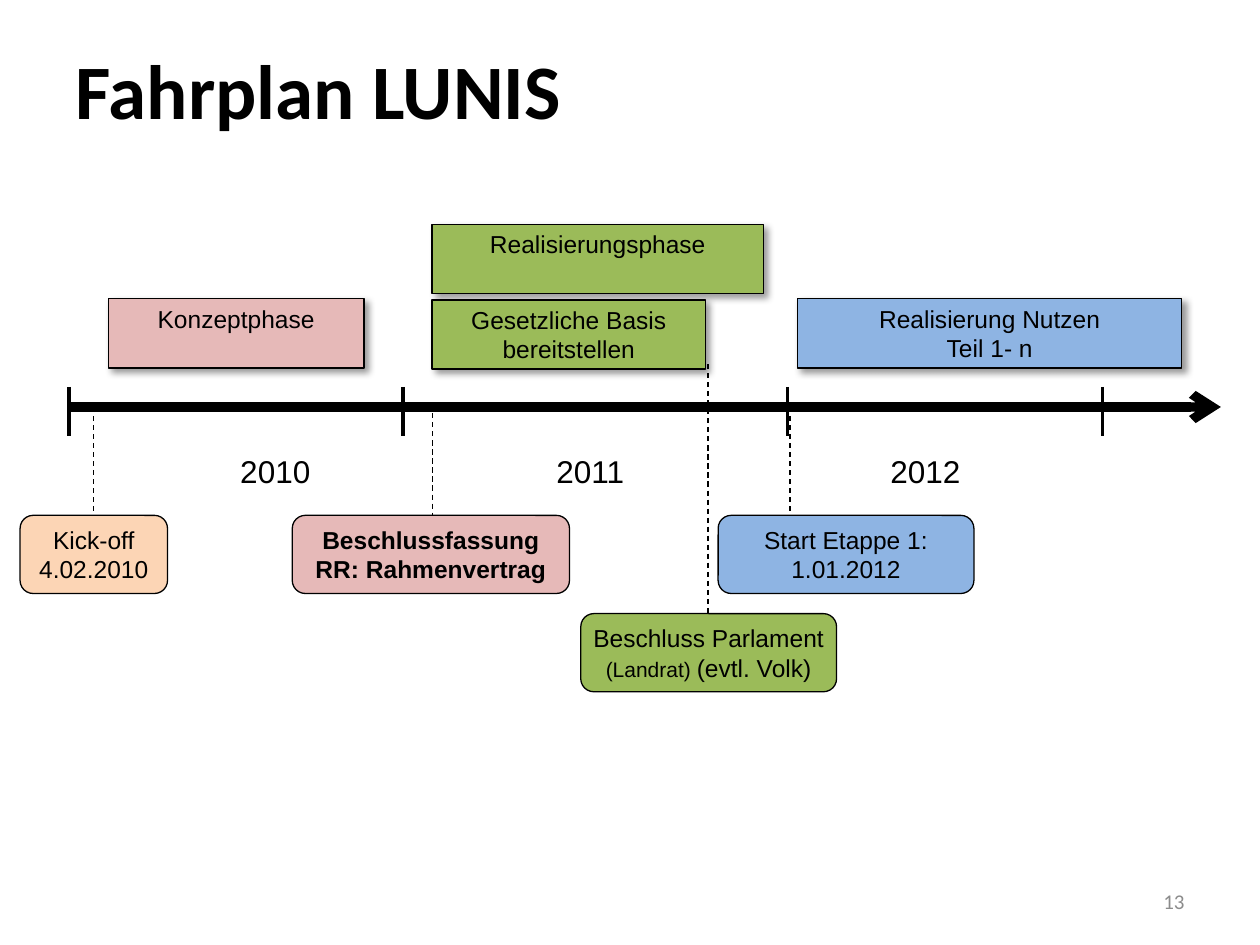
from lxml import etree
from pptx import Presentation, util as u
from pptx.dml.color import RGBColor
from pptx.enum import dml, shapes, text
from pptx.oxml import ns

COLORS = {
    "black": "000000",
    "grey": "8C8C8C",
    "rose": "E6B9B8",
    "green": "9BBB59",
    "blue": "8EB4E3",
    "peach": "FCD5B5",
}
COLUMNS, ROWS = 100, 75
AXIS_ROW, EVENT_ROW = 32.3, 40.9


def color(name):
    return RGBColor.from_string(COLORS[name])


def add_element(parent, tag, **attributes):
    element = etree.SubElement(parent, ns.qn(tag))
    for key, value in attributes.items():
        element.set(key, str(value))
    return element


def write(frame, content, font="Arial", size=14, fill="black", bold=False,
          align="CENTER", anchor="TOP", insets=(0.1, 0.05)):
    """Write one paragraph per line; a paragraph may be a list of (text, size) runs."""
    frame.word_wrap = True
    frame.auto_size = text.MSO_AUTO_SIZE.NONE
    frame.vertical_anchor = text.MSO_ANCHOR[anchor]
    frame.margin_left = frame.margin_right = u.Inches(insets[0])
    frame.margin_top = frame.margin_bottom = u.Inches(insets[1])
    lines = content.split("\n") if isinstance(content, str) else [content]
    for index, line in enumerate(lines):
        paragraph = frame.add_paragraph() if index else frame.paragraphs[0]
        paragraph.alignment = text.PP_ALIGN[align]
        for words, points in [(line, size)] if isinstance(line, str) else line:
            run = paragraph.add_run()
            run.text = words
            run.font.name, run.font.size = font, u.Pt(points)
            run.font.bold = bold
            run.font.color.rgb = color(fill)


class Timeline:
    def __init__(self, presentation):
        self.column = presentation.slide_width / COLUMNS
        self.row = presentation.slide_height / ROWS
        self.slide = presentation.slides.add_slide(presentation.slide_layouts[5])

    def place(self, left, top, width, height):
        return [u.Emu(round(value * unit)) for value, unit in zip(
            (left, top, width, height), (self.column, self.row) * 2)]

    def title(self, content, *box):
        title = self.slide.shapes.title
        title.left, title.top, title.width, title.height = self.place(*box)
        write(title.text_frame, content, font="Calibri", size=44, bold=True,
              align="LEFT", anchor="MIDDLE")

    def label(self, content, *box, **style):
        write(self.slide.shapes.add_textbox(*self.place(*box)).text_frame,
              content, **style)

    def box(self, kind, content, fill, *box, **style):
        shape = self.slide.shapes.add_shape(shapes.MSO_SHAPE[kind], *self.place(*box))
        shape.fill.solid()
        shape.fill.fore_color.rgb = color(fill)
        shape.line.color.rgb = color("black")
        shape.line.width = u.Pt(0.75)
        shape.shadow.inherit = False
        write(shape.text_frame, content, **style)
        return shape

    def phase(self, content, fill, left, top, width):
        shape = self.box("RECTANGLE", content, fill, left, top, width, 5.5,
                         insets=(0.04, 0.04))
        effects = shape._element.spPr.find(ns.qn("a:effectLst"))
        shadow = add_element(effects, "a:outerShdw", blurRad=u.Pt(4), dist=u.Pt(3),
                             dir=45 * 60000, algn="tl", rotWithShape=0)
        shade = add_element(shadow, "a:srgbClr", val=COLORS["black"])
        add_element(shade, "a:alpha", val=40000)

    def event(self, content, fill, left, top, width, **style):
        self.box("ROUNDED_RECTANGLE", content, fill, left, top, width, 6.2,
                 anchor="MIDDLE", **style)

    def line(self, left, top, right, bottom, width, dashed=False, arrow=False):
        connector = self.slide.shapes.add_connector(
            shapes.MSO_CONNECTOR.STRAIGHT, *self.place(left, top, right, bottom))
        connector.line.color.rgb = color("black")
        connector.line.width = u.Pt(width)
        if dashed:
            connector.line.dash_style = dml.MSO_LINE.DASH
        properties = connector._element.spPr
        if arrow:
            add_element(properties.find(ns.qn("a:ln")), "a:tailEnd", type="arrow")
        add_element(properties, "a:effectLst")


def main():
    presentation = Presentation()
    presentation.slide_width, presentation.slide_height = u.Inches(10), u.Inches(7.5)
    timeline = Timeline(presentation)
    timeline.title("Fahrplan LUNIS", 5, 0.8, 90, 12.5)

    # Time axis with year labels and year boundaries
    timeline.line(5.5, AXIS_ROW, 96.9, AXIS_ROW, 5.25, arrow=True)
    for year, left in (("2010", 14.8), ("2011", 39.8), ("2012", 66.4)):
        timeline.label(year, left, 35.4, 14.1, 3.7, size=18)
    for boundary in (5.5, 32, 62.5, 87.5):
        timeline.line(boundary, 30.7, boundary, 34.6, 2.25)

    # Phases above the axis
    for phase in (
        ("Konzeptphase", "rose", 8.6, 23.7, 20.3),
        ("Realisierungsphase", "green", 34.3, 17.8, 26.3),
        ("Realisierung Nutzen\nTeil 1- n", "blue", 63.3, 23.7, 30.5),
    ):
        timeline.phase(*phase)

    # Events below the axis
    narrow = {"insets": (0.04, 0.05)}
    parliament = [("Beschluss Parlament ", 14), ("(Landrat) ", 12), ("(evtl. Volk)", 14)]
    timeline.event("Kick-off\n4.02.2010", "peach", 1.6, EVENT_ROW, 11.7)
    timeline.event("Beschlussfassung\nRR: Rahmenvertrag", "rose",
                   23.2, EVENT_ROW, 22, bold=True)
    timeline.event("Start Etappe 1:\n1.01.2012", "blue", 57, EVENT_ROW, 20.3, **narrow)
    timeline.event(parliament, "green", 46.1, 48.7, 20.3, **narrow)

    # Dashed links from the axis to the events
    for column, top, bottom in (
        (7.4, AXIS_ROW, EVENT_ROW),
        (34.3, 32.8, EVENT_ROW),
        (62.7, AXIS_ROW, EVENT_ROW),
        (56.2, 28.9, 48.7),
    ):
        timeline.line(column, top, column, bottom, 0.75, dashed=True)

    # Legal basis lies over the link to parliament
    timeline.phase("Gesetzliche Basis\nbereitstellen", "green", 34.3, 23.8, 21.7)

    # Slide number
    timeline.label("13", 71.7, 69.5, 23.3, 4, font="Calibri", size=12,
                   fill="grey", align="RIGHT", anchor="MIDDLE")
    presentation.save("out.pptx")


if __name__ == "__main__":
    main()
